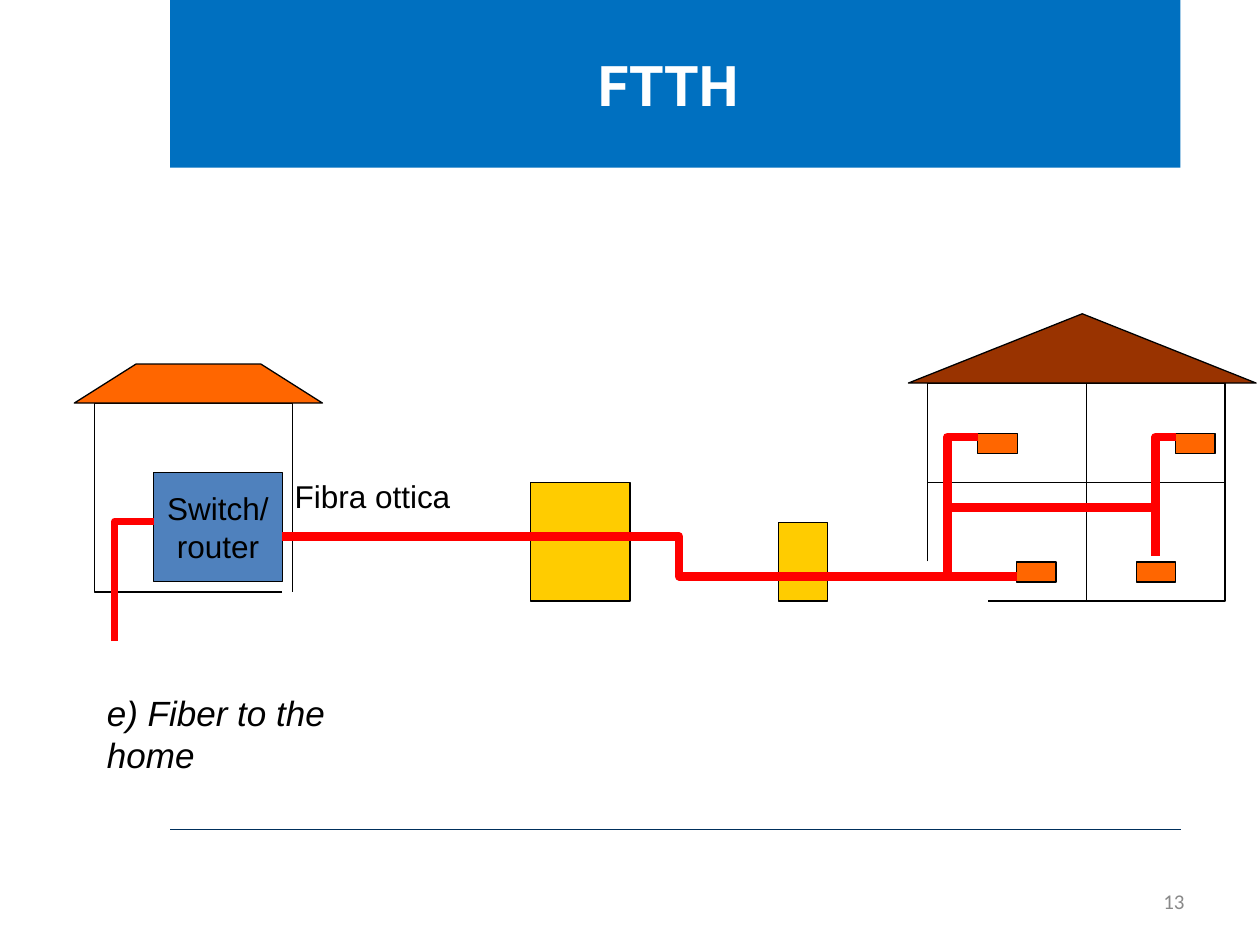
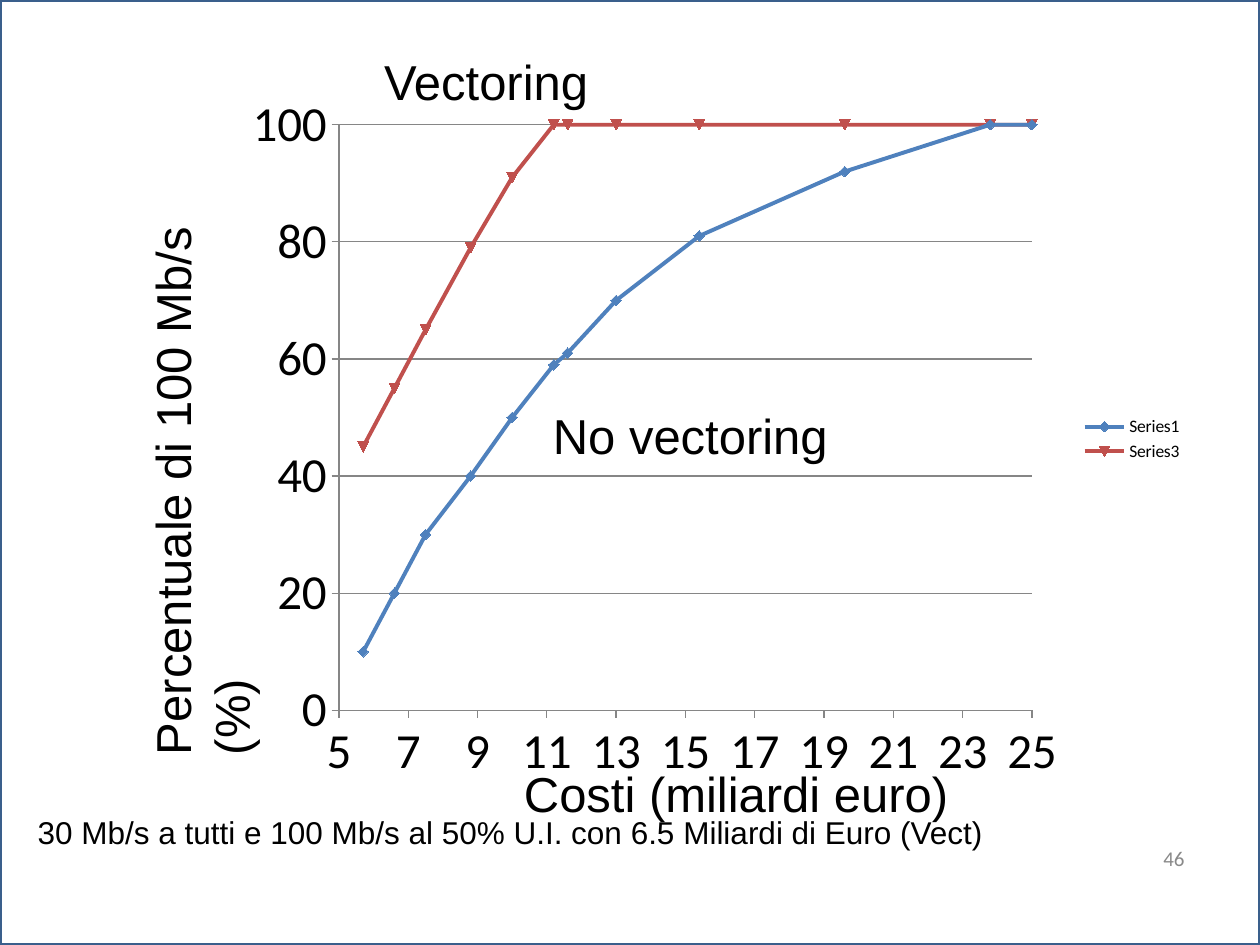
from dataclasses import dataclass

from lxml.etree import SubElement
from pptx import Presentation
from pptx.chart.data import XyChartData
from pptx.dml.color import RGBColor
from pptx.enum.chart import XL_CHART_TYPE as ChartType
from pptx.enum.chart import XL_LEGEND_POSITION as LegendPosition
from pptx.enum.chart import XL_MARKER_STYLE as MarkerStyle
from pptx.enum.chart import XL_TICK_MARK as TickMark
from pptx.enum.shapes import MSO_CONNECTOR as Connector
from pptx.enum.shapes import MSO_SHAPE as Shape
from pptx.enum.text import MSO_ANCHOR as Anchor
from pptx.enum.text import PP_ALIGN as Align
from pptx.oxml.ns import qn
from pptx.util import Pt


@dataclass(frozen=True)
class Theme:
    """Colours, fonts and type sizes of the deck."""
    band: str = "0070C0"
    rule: str = "002F5C"
    frame: str = "3A5F8C"
    white: str = "FFFFFF"
    ink: str = "000000"
    muted: str = "898989"
    grid: str = "868686"
    device: str = "4F81BD"
    orange: str = "FF6600"
    brown: str = "993300"
    cabinet: str = "FFCC00"
    fibre: str = "FF0000"
    plain: str = "4F81BD"
    vectored: str = "C0504D"
    title_font: str = "Roboto"
    body_font: str = "Arial"
    small_font: str = "Calibri"
    title_size: int = 32
    large_size: int = 28
    caption_size: int = 20
    label_size: int = 18
    number_size: int = 12
    legend_size: int = 10
    outline: float = 0.75


@dataclass(frozen=True)
class Box:
    """A rectangle in points."""
    left: float
    top: float
    width: float
    height: float

    def inner(self, x, y, width, height):
        """Return a box placed relative to this one."""
        return Box(self.left + x, self.top + y, width, height)

    def points(self, *pairs):
        """Move relative points onto the page."""
        return [(self.left + x, self.top + y) for x, y in pairs]

    def lengths(self):
        """Return the four lengths for python-pptx."""
        return [Pt(n) for n in (self.left, self.top, self.width, self.height)]


THEME = Theme()
PAGE = Box(0, 0, 720, 540)
COSTS = (5.7, 6.6, 7.5, 8.8, 10, 11.2, 11.6, 13, 15.4, 19.6, 23.8, 25)
SERIES = {
    "Series1": (10, 20, 30, 40, 50, 59, 61, 70, 81, 92, 100, 100),
    "Series3": (45, 55, 65, 79, 91) + (100,) * 7,
}


def colour(value):
    """Turn a hex string into a colour."""
    return RGBColor.from_string(value)


def stroke(line, value, width):
    """Set the colour and width of a line."""
    line.color.rgb = colour(value)
    line.width = Pt(width)


def paint(shape, fill=None, line=None, width=THEME.outline):
    """Set the fill and outline of a shape."""
    shape.shadow.inherit = False
    if fill:
        shape.fill.solid()
        shape.fill.fore_color.rgb = colour(fill)
    else:
        shape.fill.background()
    if line:
        stroke(shape.line, line, width)
    else:
        shape.line.fill.background()
    return shape


def block(page, box, fill, line=THEME.ink, width=THEME.outline, kind=Shape.RECTANGLE):
    """Add a preset shape."""
    return paint(page.shapes.add_shape(kind, *box.lengths()), fill, line, width)


def outline(page, points, line=THEME.ink, width=THEME.outline, fill=None, close=False):
    """Add an outline through the given points."""
    start, *rest = [(Pt(x), Pt(y)) for x, y in points]
    builder = page.shapes.build_freeform(*start)
    builder.add_line_segments(rest, close=close)
    return paint(builder.convert_to_shape(), fill, line, width)


def straight(page, points, line=THEME.ink, width=THEME.outline):
    """Add a straight line between two points."""
    ends = [Pt(n) for point in points for n in point]
    connector = page.shapes.add_connector(Connector.STRAIGHT, *ends)
    stroke(connector.line, line, width)
    SubElement(connector._element.spPr, qn("a:effectLst"))


def write(shape, text, size, font=THEME.body_font, ink=THEME.ink, align=Align.LEFT,
          anchor=Anchor.TOP, wrap=True, bold=False, italic=False):
    """Fill a shape with text, one paragraph a line."""
    frame = shape.text_frame
    frame.text = text
    frame.word_wrap = wrap
    frame.vertical_anchor = anchor
    for para in frame.paragraphs:
        para.alignment = align
        para.font.name = font
        para.font.size = Pt(size)
        para.font.bold = bold
        para.font.italic = italic
        para.font.color.rgb = colour(ink)


def label(page, box, text, size, **style):
    """Add a text box and return it."""
    shape = page.shapes.add_textbox(*box.lengths())
    write(shape, text, size, **style)
    return shape


def page_number(page, box, number):
    """Add the page number."""
    label(page, box, str(number), THEME.number_size, font=THEME.small_font,
          ink=THEME.muted, align=Align.RIGHT, anchor=Anchor.MIDDLE)


def title_band(page, box, title):
    """Add the blue band with its title and the rule at the foot."""
    band = block(page, box, THEME.band, line=None)
    write(band, title, THEME.title_size, font=THEME.title_font, ink=THEME.white,
          align=Align.CENTER, anchor=Anchor.MIDDLE, bold=True)
    straight(page, box.points((0, 474), (box.width, 474)), THEME.rule, 1)


def exchange(page, box):
    """Draw the exchange with its switch and incoming fibre."""
    outline(page, box.points((118.8, 130.3), (11.5, 130.3), (11.5, 22.3),
                             (124.5, 22.3), (124.5, 130.3)))
    outline(page, box.points((0, 22.3), (35.3, 0), (106.6, 0), (box.width, 22.3)),
            fill=THEME.orange, close=True)
    switch = block(page, box.inner(45.3, 61.9, 73.5, 62.6), THEME.device)
    write(switch, "Switch/\nrouter", THEME.label_size, align=Align.CENTER,
          anchor=Anchor.MIDDLE, wrap=False)
    outline(page, box.points((23, box.height), (23, 90), (45.3, 90)), THEME.fibre, 4)


def cabinets(page, box):
    """Draw the two street cabinets."""
    block(page, box.inner(0, 0, 56.9, box.height), THEME.cabinet)
    block(page, box.inner(141.8, 22.6, 28.1, box.height - 22.6), THEME.cabinet)


def home(page, box):
    """Draw the home with four rooms, each with a socket."""
    outline(page, box.points((10.8, 141.5), (10.8, 39.6), (181, 39.6),
                             (181, box.height), (45.4, box.height)))
    block(page, box.inner(0, 0, box.width, 39.6), THEME.brown,
          kind=Shape.ISOSCELES_TRIANGLE)
    straight(page, box.points((10.8, 96.5), (181, 96.5)))
    straight(page, box.points((101.7, 39.6), (101.7, box.height)))
    for x, y in ((39.7, 68.3), (152.8, 68.3), (61.9, 141.8), (130.3, 141.8)):
        block(page, box.inner(x, y, 22.5, 11.5), THEME.orange)


def fibre_run(page, box):
    """Draw the fibre from the switch to every socket."""
    entry, riser = 380, 499
    middle, floor = 40.2, box.height
    outline(page, box.points((0, 56.9), (226.8, 56.9), (226.8, floor), (entry, floor),
                             (entry, 0), (397.4, 0)), THEME.fibre, 5)
    straight(page, box.points((entry, floor), (419.7, floor)), THEME.fibre, 5)
    outline(page, box.points((entry, middle), (riser, middle), (riser, 0),
                             (box.width, 0)), THEME.fibre, 5)
    straight(page, box.points((riser, middle), (riser, 68.2)), THEME.fibre, 5)


def network_page(page, box):
    """Build the page on fibre to the home."""
    title_band(page, box.inner(97.2, 0, 577.4, 95.8), "FTTH ")
    page_number(page, box.inner(638, 500.4, 46, 28.8), 13)
    exchange(page, box.inner(42.5, 208, 141.8, 158.4))
    cabinets(page, box.inner(303.1, 275.8, 169.9, 67.7))
    home(page, box.inner(519.1, 179.3, 198.7, 164.2))
    fibre_run(page, box.inner(161.3, 249.8, 510.5, 79.5))
    label(page, box.inner(161.3, 269.3, 103.7, 28.8), "Fibra ottica",
          THEME.label_size, wrap=False)
    label(page, box.inner(54, 391.7, 180, 58), "e) Fiber to the home",
          THEME.caption_size, italic=True)


def scale_axis(axis, low, high, step):
    """Set the range, ticks and look of an axis."""
    axis.minimum_scale, axis.maximum_scale, axis.major_unit = low, high, step
    axis.major_tick_mark, axis.minor_tick_mark = TickMark.OUTSIDE, TickMark.NONE
    axis.tick_labels.font.size = Pt(THEME.large_size)
    axis.tick_labels.number_format = "General"
    axis.tick_labels.number_format_is_linked = False
    stroke(axis.format.line, THEME.grid, THEME.outline)


def fix_plot(chart, **fractions):
    """Fix the inner plot area as fractions of the chart."""
    area = chart._chartSpace.chart.plotArea
    for old in area.findall(qn("c:layout")):
        area.remove(old)
    layout = SubElement(area, qn("c:layout"))
    area.insert(0, layout)
    manual = SubElement(layout, qn("c:manualLayout"))
    settings = {"layoutTarget": "inner", "xMode": "edge", "yMode": "edge", **fractions}
    for tag, value in settings.items():
        SubElement(manual, qn(f"c:{tag}")).set("val", str(value))


def coverage_chart(page, box):
    """Add the chart of coverage against cost."""
    data = XyChartData()
    for name, shares in SERIES.items():
        series = data.add_series(name)
        for cost, share in zip(COSTS, shares):
            series.add_data_point(cost, share)
    chart = page.shapes.add_chart(ChartType.XY_SCATTER_LINES, *box.lengths(), data).chart
    chart.has_title = False
    chart.font.name = THEME.small_font
    chart.font.size = Pt(THEME.legend_size)
    chart.font.color.rgb = colour(THEME.ink)
    chart.has_legend = True
    chart.legend.position = LegendPosition.RIGHT
    chart.legend.include_in_layout = False
    scale_axis(chart.category_axis, 5, 25, 2)
    scale_axis(chart.value_axis, 0, 100, 20)
    chart.category_axis.has_major_gridlines = False
    chart.value_axis.has_major_gridlines = True
    stroke(chart.value_axis.major_gridlines.format.line, THEME.grid, THEME.outline)
    plot = chart.plots[0]
    plot.vary_by_categories = False
    for series, value in zip(plot.series, (THEME.plain, THEME.vectored)):
        series.smooth = False
        stroke(series.format.line, value, 2.25)
        series.marker.size = 6
        series.marker.format.fill.solid()
        series.marker.format.fill.fore_color.rgb = colour(value)
        stroke(series.marker.format.line, value, THEME.outline)
    plain, vectored = plot.series
    plain.marker.style = MarkerStyle.DIAMOND
    vectored._element.idx.val = 2
    fix_plot(chart, x=0.11, y=0.06, w=0.72, h=0.82)


def coverage_page(page, box):
    """Build the page on coverage and cost."""
    block(page, box, THEME.white, THEME.frame, 2)
    page_number(page, box.inner(638, 476, 46, 28.8), 46)
    label(page, box.inner(14.4, 460.8, 700, 36),
          "30 Mb/s a tutti e 100 Mb/s al 50% U.I. con 6.5 Miliardi di Euro (Vect)",
          THEME.label_size)
    coverage_chart(page, box.inner(133.2, 46.8, 550, 408.2))
    upright = label(page, box.inner(-77.8, 242, 352, 41), "Percentuale di 100 Mb/s (%)",
                    THEME.large_size)
    upright.rotation = 270
    for text, x, y, width in (("Costi (miliardi euro)", 292.3, 432.7, 294.5),
                              ("No vectoring", 308.9, 228.2, 175.7),
                              ("Vectoring", 212.4, 25.9, 170)):
        label(page, box.inner(x, y, width, 41), text, THEME.large_size)


def main():
    """Build the deck."""
    deck = Presentation()
    deck.slide_width, deck.slide_height = Pt(PAGE.width), Pt(PAGE.height)
    for build in (network_page, coverage_page):
        build(deck.slides.add_slide(deck.slide_layouts[6]), PAGE)
    deck.save("out.pptx")


if __name__ == "__main__":
    main()
